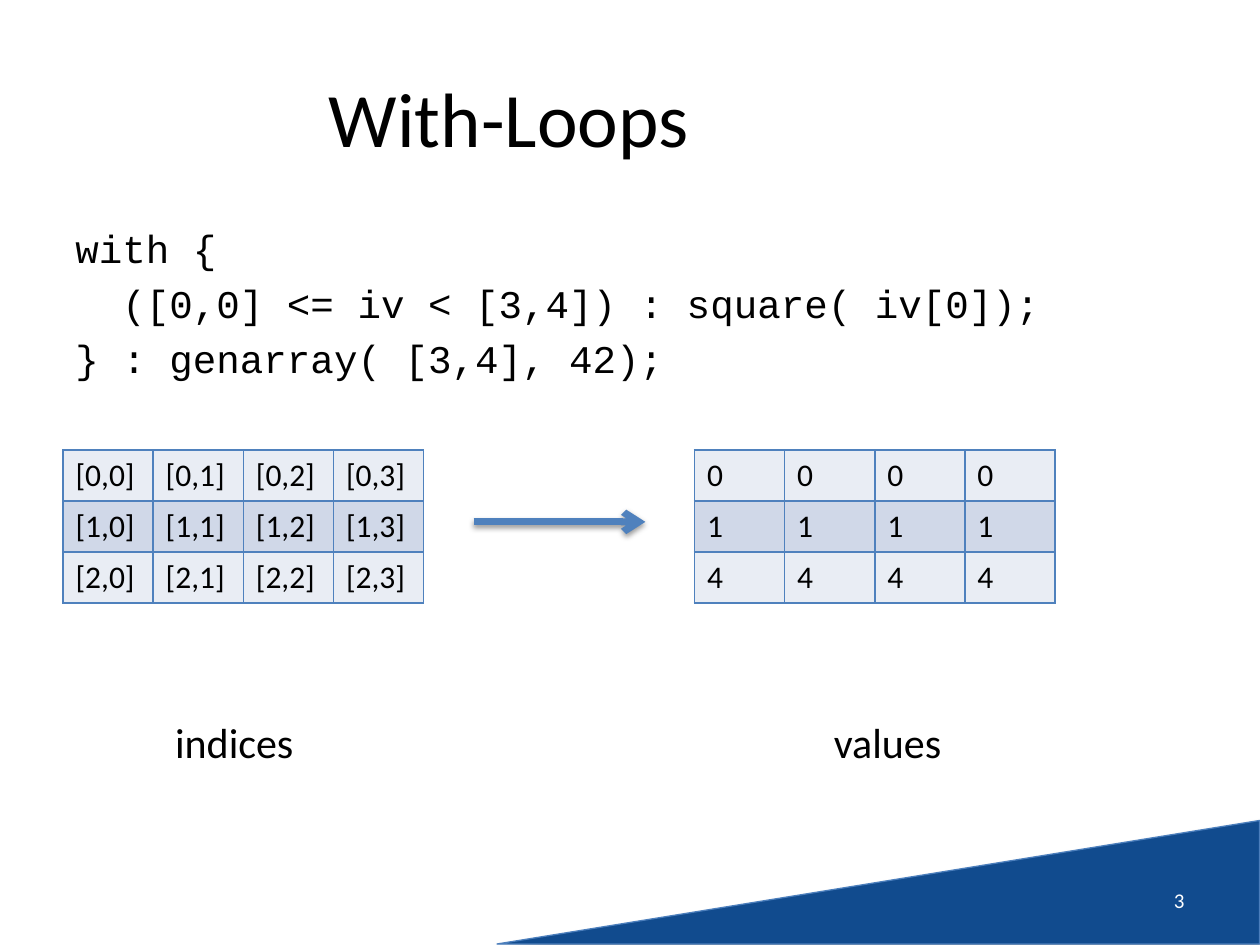
from lxml import etree
from pptx import Presentation
from pptx.dml.color import RGBColor
from pptx.enum.shapes import MSO_CONNECTOR, MSO_SHAPE
from pptx.enum.text import MSO_ANCHOR, PP_ALIGN
from pptx.oxml.ns import qn
from pptx.util import Cm, Pt

LINE = MSO_CONNECTOR.STRAIGHT
WEDGE = MSO_SHAPE.RIGHT_TRIANGLE
TOP, MIDDLE = MSO_ANCHOR.TOP, MSO_ANCHOR.MIDDLE
LEFT, CENTER, RIGHT = PP_ALIGN.LEFT, PP_ALIGN.CENTER, PP_ALIGN.RIGHT

BLACK, WHITE, BLUE = "000000", "FFFFFF", "4F81BD"
NAVY, EDGE = "114B8E", "4B7EBC"
BANDS = ["E9EDF4", "D0D8E8"]

CODE = [
    "with {",
    "  ([0,0] <= iv < [3,4]) : square( iv[0]);",
    "} : genarray( [3,4], 42);",
]
ROWS, COLS = 3, 4
INDICES = [[f"[{r},{c}]" for c in range(COLS)] for r in range(ROWS)]
VALUES = [[str(r * r)] * COLS for r in range(ROWS)]


def paint(color, value):
    color.rgb = RGBColor.from_string(value)


def fill(part, value):
    part.fill.solid()
    paint(part.fill.fore_color, value)


def style(para, size, name="Calibri", color=BLACK):
    font = para.font
    font.size, font.name = Pt(size), name
    paint(font.color, color)


def child(parent, tag, **attrs):
    node = etree.SubElement(parent, qn(tag))
    for key, value in attrs.items():
        node.set(key, str(value))
    return node


def shade(shape, alpha, dist):
    """Add a soft shadow straight below; alpha in percent, dist in points."""
    effects = child(shape._element.spPr, "a:effectLst")
    outer = child(effects, "a:outerShdw", blurRad=Pt(3.1), dist=Pt(dist),
                  dir=90 * 60000, rotWithShape=0)
    color = child(outer, "a:srgbClr", val=BLACK)
    child(color, "a:alpha", val=alpha * 1000)


def add_text(slide, box, lines, size, name="Calibri", color=BLACK,
             align=LEFT, anchor=TOP, gap=0):
    frame = slide.shapes.add_textbox(*map(Cm, box)).text_frame
    frame.word_wrap = True
    frame.vertical_anchor = anchor
    for i, line in enumerate(lines):
        para = frame.paragraphs[0] if i == 0 else frame.add_paragraph()
        para.text = line
        para.alignment = align
        if i:
            para.space_before = Pt(gap)
        style(para, size, name, color)


def add_edges(cell):
    props = cell._tc.get_or_add_tcPr()
    for side in "LRTB":
        edge = child(props, f"a:ln{side}", w=Pt(1))
        child(child(edge, "a:solidFill"), "a:srgbClr", val=BLUE)


def add_grid(slide, box, data, label, shift):
    """Draw a banded table with its label below, shift cm from its left."""
    left, top, width, height = box
    table = slide.shapes.add_table(ROWS, COLS, *map(Cm, box)).table
    table.first_row = table.horz_banding = False
    for col in table.columns:
        col.width = Cm(width / COLS)
    for r, row in enumerate(data):
        table.rows[r].height = Cm(height / ROWS)
        for c, text in enumerate(row):
            cell = table.cell(r, c)
            cell.text = text
            style(cell.text_frame.paragraphs[0], 18)
            add_edges(cell)
            fill(cell, BANDS[r % 2])
    add_text(slide, (left + shift, top + 5.24, 3.1, 1.27), [label], 24)


def add_arrow(slide, left, top, width):
    ends = map(Cm, (left, top, left + width, top))
    arrow = slide.shapes.add_connector(LINE, *ends)
    arrow.line.width = Pt(4)
    paint(arrow.line.color, BLUE)
    child(arrow.line._get_or_add_ln(), "a:tailEnd", type="arrow")
    shade(arrow, 38, 1.6)


def add_corner(slide, box):
    """Fill the box with a wedge that rises to the right, and the number."""
    left, top, width, height = box
    mid_x, mid_y = left + width / 2, top + height / 2
    turned = (mid_x - height / 2, mid_y - width / 2, height, width)
    wedge = slide.shapes.add_shape(WEDGE, *map(Cm, turned))
    wedge.rotation = 270
    fill(wedge, NAVY)
    paint(wedge.line.color, EDGE)
    wedge.line.width = Pt(0.75)
    shade(wedge, 35, 1.8)
    add_text(slide, (left + 8.19, top + 1.1, 5.92, 1.02), ["3"], 12,
             color=WHITE, align=RIGHT, anchor=MIDDLE)


def main():
    deck = Presentation()
    deck.slide_width, deck.slide_height = Cm(25.4), Cm(19.05)
    slide = deck.slides.add_slide(deck.slide_layouts[6])
    add_corner(slide, (10.02, 16.54, 15.37, 2.49))
    add_text(slide, (1.27, 0.76, 17.98, 3.18), ["With-Loops"], 44,
             align=CENTER, anchor=MIDDLE)
    add_text(slide, (1.27, 4.4, 20.35, 3.43), CODE, 22.4, "Courier New",
             gap=4.5)
    add_grid(slide, (1.27, 9.07, 7.27, 3.09), INDICES, "indices", 2.01)
    add_grid(slide, (14, 9.07, 7.27, 3.09), VALUES, "values", 2.56)
    add_arrow(slide, 9.55, 10.52, 3.46)
    deck.save("out.pptx")


if __name__ == "__main__":
    main()
